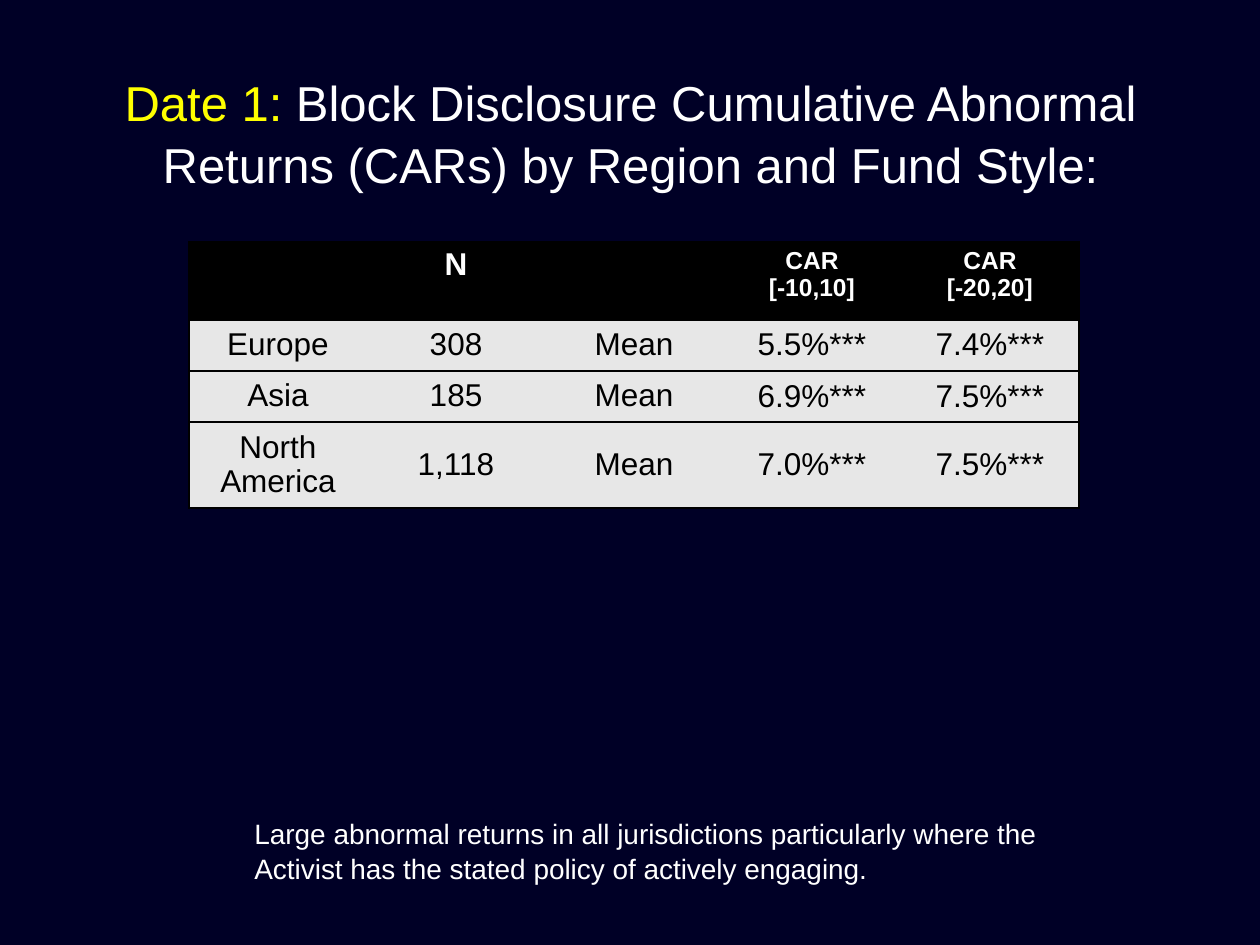
from lxml import etree
from pptx import Presentation
from pptx import util as u
from pptx.dml.color import RGBColor
from pptx.enum import text
from pptx.oxml.ns import qn

NAVY = RGBColor(0x00, 0x00, 0x26)
BLACK = RGBColor(0x00, 0x00, 0x00)
WHITE = RGBColor(0xFF, 0xFF, 0xFF)
YELLOW = RGBColor(0xFF, 0xFF, 0x00)
GREY = RGBColor(0xE7, 0xE7, 0xE7)
PX = u.Inches(1) // 126
HEADER = ["", "N", "", "CAR\n[-10,10]", "CAR\n[-20,20]"]
REGIONS = [
    ["Europe", "308", "Mean", "5.5%***", "7.4%***"],
    ["Asia", "185", "Mean", "6.9%***", "7.5%***"],
    ["North America", "1,118", "Mean", "7.0%***", "7.5%***"],
]
ROW_HEIGHTS = [78, 51, 51, 83]


class Deck:
    font = "Arial"

    def __init__(self, prs):
        self.s = prs.slides.add_slide(prs.slide_layouts[6])
        self.s.background.fill.solid()
        self.s.background.fill.fore_color.rgb = NAVY

    def style(self, tf, size, color, align, spacing, bold=False):
        for p in tf.paragraphs:
            p.alignment = align
            p.line_spacing = spacing
            p.font.size = u.Pt(size)
            for r in p.runs:
                r.font.name = self.font
                r.font.size = u.Pt(size)
                r.font.bold = bold
                r.font.color.rgb = color

    def text_box(self, box, content, size, align, anchor, wrap):
        tf = self.s.shapes.add_textbox(*(v * PX for v in box)).text_frame
        tf.text = content
        tf.word_wrap = wrap
        tf.vertical_anchor = anchor
        self.style(tf, size, WHITE, align, 1.05)
        return tf

    def border(self, cell, side, visible):
        ln = etree.SubElement(cell._tc.get_or_add_tcPr(), qn(f"a:ln{side}"), w=str(u.Pt(1)))
        if visible:
            fill = etree.SubElement(ln, qn("a:solidFill"))
            etree.SubElement(fill, qn("a:srgbClr"), val=str(BLACK))
        else:
            etree.SubElement(ln, qn("a:noFill"))

    def table(self, left, top, column, heights, rows):
        cols = len(rows[0])
        tbl = self.s.shapes.add_table(
            len(rows), cols, left * PX, top * PX, column * cols * PX, sum(heights) * PX
        ).table
        for i, height in enumerate(heights):
            tbl.rows[i].height = height * PX
        for i, row in enumerate(rows):
            for j, value in enumerate(row):
                cell = tbl.cell(i, j)
                cell.text_frame.text = value
                for side, visible in zip("LRTB", (j == 0, j == cols - 1, True, True)):
                    self.border(cell, side, visible)
                self.fill_cell(cell, i == 0, "\n" in value)
                if i > 1 and j > 2:
                    cell.margin_left = cell.margin_right = cell.margin_top = PX
                    cell.margin_bottom = 0

    def fill_cell(self, cell, header, small):
        cell.fill.solid()
        cell.fill.fore_color.rgb = BLACK if header else GREY
        cell.vertical_anchor = text.MSO_ANCHOR.TOP if header else text.MSO_ANCHOR.MIDDLE
        self.style(cell.text_frame, 14 if small else 18, WHITE if header else BLACK,
                   text.PP_ALIGN.CENTER, 0.97, header)


def main():
    prs = Presentation()
    prs.slide_width, prs.slide_height = u.Inches(10), u.Inches(7.5)
    deck = Deck(prs)
    title = deck.text_box(
        (95, 53, 1071, 157), "Date 1:", 28,
        text.PP_ALIGN.CENTER, text.MSO_ANCHOR.MIDDLE, True)
    p = title.paragraphs[0]
    p.add_run().text = " Block Disclosure Cumulative Abnormal Returns (CARs) by Region and Fund Style:"
    deck.style(title, 28, WHITE, text.PP_ALIGN.CENTER, 1.05)
    p.runs[0].font.color.rgb = YELLOW
    deck.table(189, 242, 178, ROW_HEIGHTS, [HEADER] + REGIONS)
    deck.text_box(
        (242, 809, 825, 115),
        "Large abnormal returns in all jurisdictions particularly where the\n"
        "Activist has the stated policy of actively engaging.",
        16, text.PP_ALIGN.LEFT, text.MSO_ANCHOR.TOP, False)
    prs.save("out.pptx")


if __name__ == "__main__":
    main()
